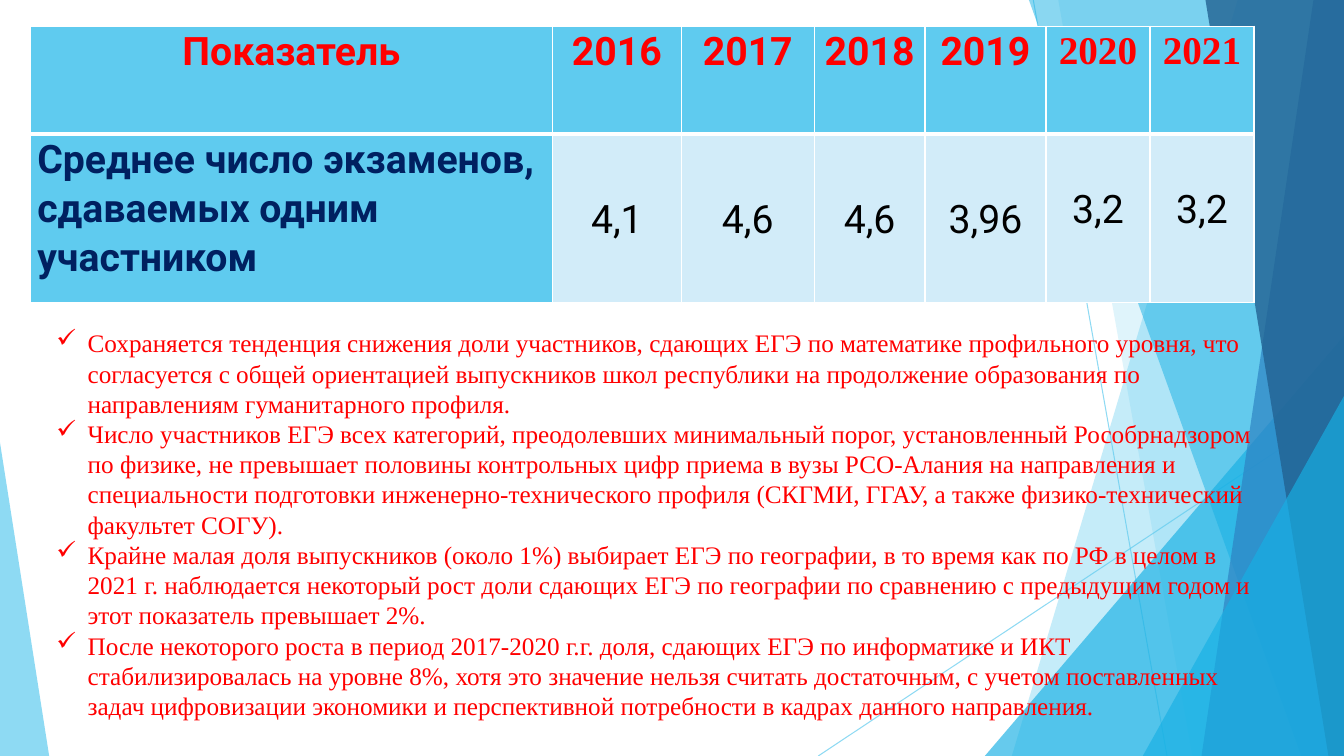
from lxml.etree import SubElement
from pptx import Presentation
from pptx.dml.color import RGBColor
from pptx.enum.shapes import MSO_CONNECTOR, MSO_SHAPE
from pptx.enum.text import MSO_ANCHOR, PP_ALIGN
from pptx.oxml.ns import qn
from pptx.util import Cm, Pt

SKY = RGBColor(0x5F, 0xCB, 0xEF)
AZURE = RGBColor(0x17, 0xB0, 0xE4)
BLUE = RGBColor(0x2E, 0x83, 0xC3)
DEEP = RGBColor(0x22, 0x62, 0x92)
PALE = RGBColor(0xD2, 0xEC, 0xF9)
NAVY = RGBColor(0x00, 0x20, 0x60)
RED = RGBColor(0xFF, 0x00, 0x00)
BLACK = RGBColor(0x00, 0x00, 0x00)
WHITE = RGBColor(0xFF, 0xFF, 0xFF)
SANS, SERIF = "Roboto", "Times New Roman"
WIDTH, HEIGHT = 33.87, 19.05

HEADER = ["Показатель", "2016", "2017", "2018", "2019", "2020", "2021"]
AVERAGES = ["Среднее число экзаменов, сдаваемых одним участником",
            "4,1", "4,6", "4,6", "3,96", "3,2", "3,2"]
COLUMN_WIDTHS = [13.16, 3.25, 3.35, 2.79, 3.05, 2.62, 2.62]
ROW_HEIGHTS = [2.72, 4.24]
FIRST_LATE_COLUMN = 5

CONCLUSIONS = [
    "Сохраняется тенденция снижения доли участников, сдающих ЕГЭ по математике "
    "профильного уровня, что согласуется с общей ориентацией выпускников школ "
    "республики на продолжение образования по направлениям гуманитарного профиля.",
    "Число участников ЕГЭ всех категорий, преодолевших минимальный порог, "
    "установленный Рособрнадзором по физике, не превышает половины контрольных цифр "
    "приема в вузы РСО-Алания на направления и специальности подготовки "
    "инженерно-технического профиля (СКГМИ, ГГАУ, а также физико-технический "
    "факультет СОГУ).",
    "Крайне малая доля выпускников (около 1%) выбирает ЕГЭ по географии, в то время "
    "как по РФ в целом в 2021 г. наблюдается некоторый рост доли сдающих ЕГЭ по "
    "географии по сравнению с предыдущим годом и этот показатель превышает 2%.",
    "После некоторого роста в период 2017-2020 г.г. доля, сдающих ЕГЭ по информатике "
    "и ИКТ стабилизировалась на уровне 8%, хотя это значение нельзя считать "
    "достаточным, с учетом поставленных задач цифровизации экономики и перспективной "
    "потребности в кадрах данного направления.",
]

# Thin lines: start x, start y, end x, end y
RAYS = [(26.04, 0, 29.41, HEIGHT), (WIDTH, 10.24, 20.62, HEIGHT)]
# Facets reach the right edge: top left x, bottom left x, colour, opacity
# Triangles stand on the bottom edge: left, top, width, apex, colour, opacity
BACKDROP = [
    ("facet", 31.19, 25.5, SKY, 36),
    ("facet", 26.67, 30.05, SKY, 20),
    ("triangle", 24.82, 8.46, 9.05, 1, AZURE, 66),
    ("facet", 25.93, 32.79, AZURE, 50),
    ("facet", 33.1, 30.28, BLUE, 70),
    ("facet", 30.38, 33.48, DEEP, 80),
    ("triangle", 28.8, 9.98, 5.07, 1, AZURE, 66),
    ("triangle", 0, 11.15, 1.24, 0, SKY, 70),
]


def set_opacity(color_holder, percent):
    color = next(color_holder.iter(qn("a:srgbClr")))
    SubElement(color, qn("a:alpha"), val=str(percent * 1000))


def add_ray(page, x1, y1, x2, y2):
    ray = page.shapes.add_connector(MSO_CONNECTOR.STRAIGHT, Cm(x1), Cm(y1), Cm(x2), Cm(y2))
    ray.line.color.rgb = SKY
    ray.line.width = Pt(0.75)
    properties = ray._element.spPr
    set_opacity(properties, 70)
    SubElement(properties, qn("a:effectLst"))


def add_facet(page, top_left, bottom_left):
    outline = page.shapes.build_freeform(Cm(top_left), 0)
    outline.add_line_segments([(Cm(WIDTH), 0), (Cm(WIDTH), Cm(HEIGHT)),
                               (Cm(bottom_left), Cm(HEIGHT))])
    return outline.convert_to_shape()


def add_triangle(page, left, top, width, apex):
    triangle = page.shapes.add_shape(MSO_SHAPE.ISOSCELES_TRIANGLE, Cm(left), Cm(top),
                                     Cm(width), Cm(HEIGHT - top))
    triangle.adjustments[0] = apex
    return triangle


def add_backdrop(page):
    for ray in RAYS:
        add_ray(page, *ray)
    builders = {"facet": add_facet, "triangle": add_triangle}
    for kind, *geometry, color, opacity in BACKDROP:
        shape = builders[kind](page, *geometry)
        shape.shadow.inherit = False
        shape.fill.solid()
        shape.fill.fore_color.rgb = color
        shape.line.fill.background()
        set_opacity(shape._element.spPr, opacity)


def format_span(span, size, font, color, bold=False):
    span.font.size = Pt(size)
    span.font.name = font
    span.font.color.rgb = color
    span.font.bold = bold


def set_borders(cell, widths):
    """Draw white borders; widths are points for left, right, top, bottom."""
    properties = cell._tc.get_or_add_tcPr()
    for index, (side, width) in enumerate(zip("LRTB", widths)):
        border = properties.makeelement(qn(f"a:ln{side}"), {"w": str(Pt(width))})
        fill = SubElement(border, qn("a:solidFill"))
        SubElement(fill, qn("a:srgbClr"), val=str(WHITE))
        properties.insert(index, border)


def fill_cell(cell, text, row, column):
    is_header, is_label = row == 0, column == 0
    is_late = column >= FIRST_LATE_COLUMN
    cell.fill.solid()
    cell.fill.fore_color.rgb = SKY if is_header or is_label else PALE
    cell.margin_left = cell.margin_right = Cm(0.18)
    cell.margin_top = cell.margin_bottom = 0
    if not is_header and is_late:
        cell.margin_top = Cm(1.25)
    elif not is_header and not is_label:
        cell.vertical_anchor = MSO_ANCHOR.MIDDLE
    cell.text_frame.text = text
    para = cell.text_frame.paragraphs[0]
    para.line_spacing = 1.07
    para.alignment = PP_ALIGN.CENTER if is_header or not is_label else PP_ALIGN.LEFT
    color = RED if is_header else NAVY if is_label else BLACK
    font = SERIF if is_header and is_late else SANS
    format_span(para.runs[0], 28, font, color, is_header or is_label)
    set_borders(cell, (1, 1, 1, 3) if is_header else (1, 1, 3, 1))


def add_exam_table(page):
    frame = page.shapes.add_table(2, len(HEADER), Cm(0.76), Cm(0.66),
                                  Cm(sum(COLUMN_WIDTHS)), Cm(sum(ROW_HEIGHTS)))
    table = frame.table
    for column, width in zip(table.columns, COLUMN_WIDTHS):
        column.width = Cm(width)
    for row, height in zip(table.rows, ROW_HEIGHTS):
        row.height = Cm(height)
    for row, texts in enumerate([HEADER, AVERAGES]):
        for column, text in enumerate(texts):
            fill_cell(table.cell(row, column), text, row, column)


def add_conclusions(page):
    box = page.shapes.add_textbox(Cm(1.17), Cm(8.13), Cm(30.96), Cm(11.02))
    box.text_frame.word_wrap = True
    box.text_frame.text = "\n".join(CONCLUSIONS)
    for para in box.text_frame.paragraphs:
        format_span(para.runs[0], 18, SERIF, RED)
        properties = para._p.get_or_add_pPr()
        properties.set("marL", str(Cm(0.79)))
        properties.set("indent", str(-Cm(0.79)))
        SubElement(properties, qn("a:buChar"), char="✓")


deck = Presentation()
deck.slide_width, deck.slide_height = Cm(WIDTH), Cm(HEIGHT)
page = deck.slides.add_slide(deck.slide_layouts[6])
add_backdrop(page)
add_exam_table(page)
add_conclusions(page)
deck.save("out.pptx")
